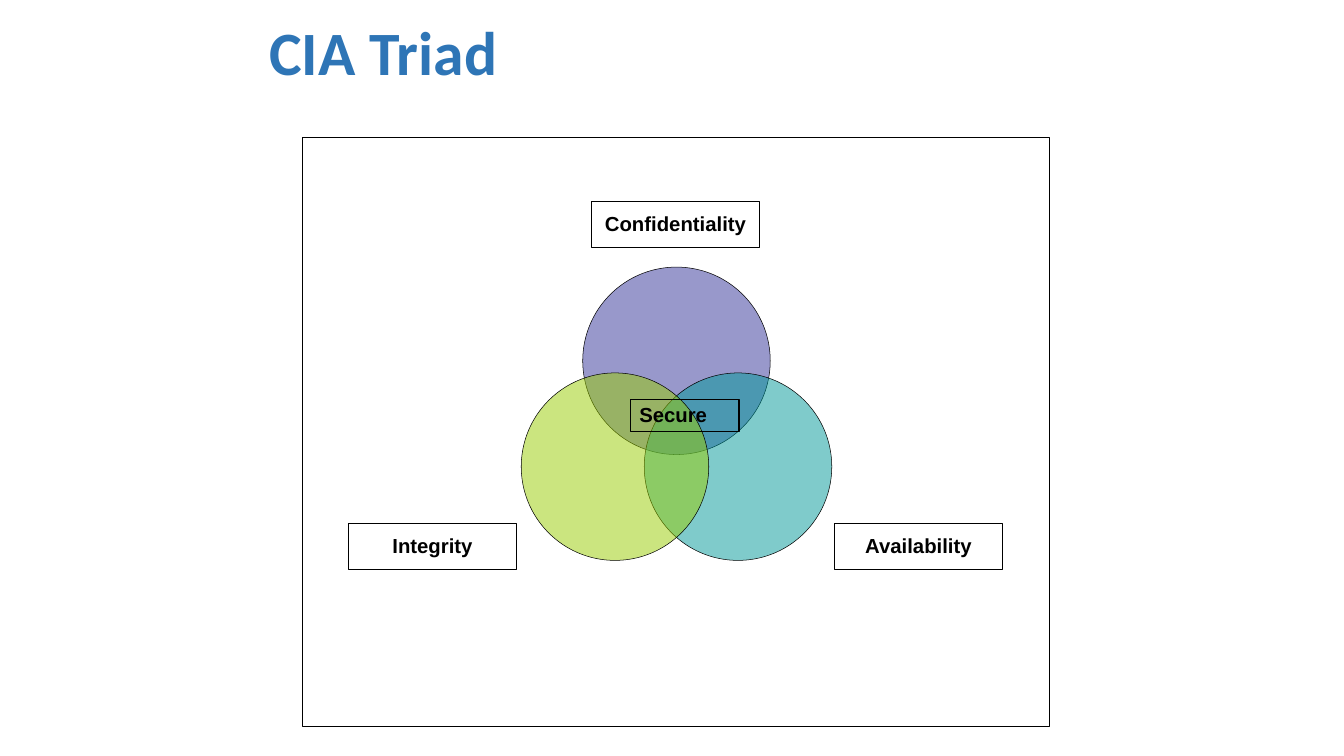
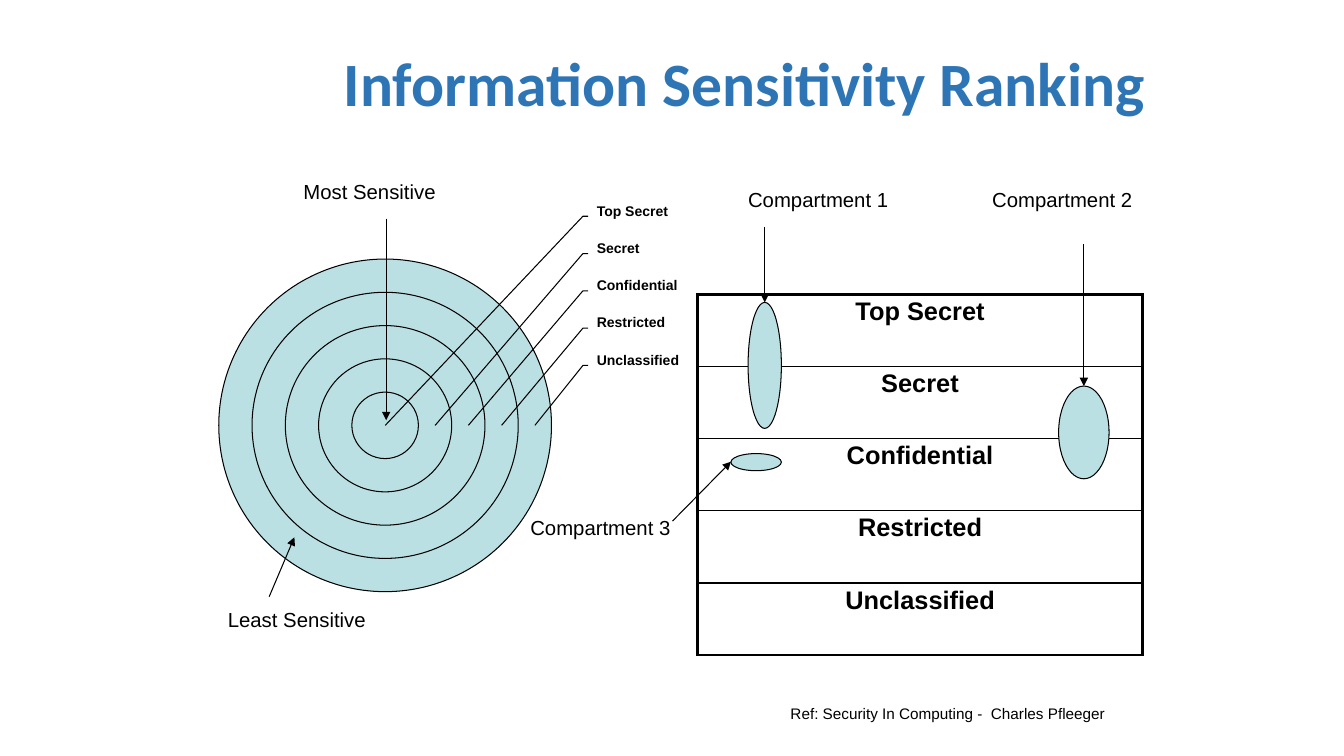
from dataclasses import dataclass

from lxml import etree
from pptx import Presentation
from pptx.dml.color import RGBColor
from pptx.enum.shapes import MSO_CONNECTOR, MSO_SHAPE
from pptx.enum.text import MSO_ANCHOR, MSO_AUTO_SIZE, PP_ALIGN
from pptx.oxml.ns import qn
from pptx.util import Inches, Pt

RECTANGLE, OVAL = MSO_SHAPE.RECTANGLE, MSO_SHAPE.OVAL
CALLOUT = MSO_SHAPE.LINE_CALLOUT_2_NO_BORDER
STRAIGHT = MSO_CONNECTOR.STRAIGHT
LEFT, CENTER = PP_ALIGN.LEFT, PP_ALIGN.CENTER
TOP, MIDDLE = MSO_ANCHOR.TOP, MSO_ANCHOR.MIDDLE
FIXED_SIZE = MSO_AUTO_SIZE.NONE

BLACK = RGBColor(0x00, 0x00, 0x00)
TITLE_BLUE = RGBColor(0x2E, 0x75, 0xB6)
PALE_TEAL = RGBColor(0xBB, 0xE0, 0xE3)
INDIGO = RGBColor(0x33, 0x33, 0x99)
TEAL = RGBColor(0x00, 0x99, 0x99)
LIME = RGBColor(0x99, 0xCC, 0x00)

LABEL_SIZE = 14.5
LINE_SPACING = 0.93
INSETS = (0.09, 0.05)
NO_INSETS = (0, 0)
TITLE_ONLY = 5


@dataclass(frozen=True)
class Box:
    left: float
    top: float
    width: float
    height: float

    @property
    def center_x(self) -> float:
        return self.left + self.width / 2

    def lengths(self) -> tuple:
        return tuple(Inches(n) for n in (self.left, self.top, self.width, self.height))


@dataclass(frozen=True)
class Principle:
    name: str
    color: RGBColor
    circle: tuple
    label: tuple


@dataclass(frozen=True)
class Compartment:
    name: str
    label: tuple
    oval: Box
    arrow_top: float


PRINCIPLES = [
    Principle("Confidentiality", INDIGO, (5.78, 2.65), (5.87, 2)),
    Principle("Availability", TEAL, (6.39, 3.7), (8.28, 5.19)),
    Principle("Integrity", LIME, (5.17, 3.7), (3.46, 5.19)),
]
LEVELS = ["Top Secret", "Secret", "Confidential", "Restricted", "Unclassified"]
TOP_COMPARTMENTS = [
    Compartment("Compartment 1", (7.33, 1.83), Box(7.42, 3, 0.33, 1.25), 2.25),
    Compartment("Compartment 2", (9.75, 1.83), Box(10.5, 3.83, 0.5, 0.92), 2.42),
]
SIDE_OVAL = Box(7.25, 4.5, 0.5, 0.17)


def write(frame, text: str, *, size: float = LABEL_SIZE, bold: bool = False,
          color: RGBColor = BLACK, font: str = "Arial", align=LEFT, anchor=TOP,
          insets: tuple = INSETS, wrap: bool = True) -> None:
    """Fill a text frame or table cell with one formatted paragraph."""
    frame.margin_left = frame.margin_right = Inches(insets[0])
    frame.margin_top = frame.margin_bottom = Inches(insets[1])
    frame.vertical_anchor = anchor
    if hasattr(frame, "auto_size"):
        frame.auto_size = FIXED_SIZE
        frame.word_wrap = wrap
        para = frame.paragraphs[0]
    else:
        para = frame.text_frame.paragraphs[0]
    para.alignment = align
    para.line_spacing = LINE_SPACING
    span = para.add_run()
    span.text = text
    span.font.name, span.font.size = font, Pt(size)
    span.font.bold, span.font.color.rgb = bold, color


def add_page(deck, title: str, left: float, top: float):
    page = deck.slides.add_slide(deck.slide_layouts[TITLE_ONLY])
    heading = page.shapes.title
    heading.left, heading.top, heading.width, heading.height = Box(left, top, 9, 0.78).lengths()
    write(heading.text_frame, title, size=44, bold=True, color=TITLE_BLUE,
          font="Calibri", anchor=MIDDLE)
    return page


def add_figure(page, kind, box: Box, *, fill: RGBColor | None = None,
               opacity: int = 100, line_width: float = 0.75):
    shape = page.shapes.add_shape(kind, *box.lengths())
    shape.shadow.inherit = False
    shape.line.color.rgb, shape.line.width = BLACK, Pt(line_width)
    if fill is None:
        shape.fill.background()
    else:
        shape.fill.solid()
        shape.fill.fore_color.rgb = fill
        if opacity < 100:
            tint = shape.element.spPr.find(qn("a:solidFill"))[0]
            etree.SubElement(tint, qn("a:alpha"), val=str(opacity * 1000))
    return shape


def add_label(page, text: str, box: Box, size: float = LABEL_SIZE) -> None:
    write(page.shapes.add_textbox(*box.lengths()).text_frame, text, size=size)


def add_arrow(page, start: tuple, end: tuple):
    arrow = page.shapes.add_connector(STRAIGHT, *(Inches(n) for n in start + end))
    arrow.line.color.rgb, arrow.line.width = BLACK, Pt(0.75)
    etree.SubElement(arrow.line._get_or_add_ln(), qn("a:tailEnd"), type="triangle")
    etree.SubElement(arrow.element.spPr, qn("a:effectLst"))
    return arrow


def set_borders(cell, widths: dict) -> None:
    """Draw black borders; the keys run in schema order: L, R, T, B."""
    properties = cell._tc.get_or_add_tcPr()
    for position, (side, width) in enumerate(widths.items()):
        border = etree.Element(qn(f"a:ln{side}"), w=str(Pt(width)))
        paint = etree.SubElement(border, qn("a:solidFill"))
        etree.SubElement(paint, qn("a:srgbClr"), val=str(BLACK))
        properties.insert(position, border)


def add_rings(page) -> None:
    """Concentric circles, outermost first, each with a callout into its band."""
    center_x, center_y, step = 3.82, 4.22, 0.33
    tag_left, tag_width, tag_height = 5.92, 0.66, 0.37
    for index in reversed(range(len(LEVELS))):
        radius = step * (index + 1)
        add_figure(page, OVAL, Box(center_x - radius, center_y - radius, 2 * radius, 2 * radius),
                   fill=PALE_TEAL)
        tag = Box(tag_left, 2.02 + tag_height * index, tag_width, tag_height)
        callout = add_figure(page, CALLOUT, tag)
        target_x = center_x + (radius - step / 2 if index else 0)
        bends = (0.34, -0.13, 0.34, -0.21,
                 (center_y - tag.top) / tag_height, (target_x - tag_left) / tag_width)
        for number, bend in enumerate(bends):
            callout.adjustments[number] = bend
        write(callout.text_frame, LEVELS[index], size=10, bold=True,
              insets=NO_INSETS, wrap=False)


def add_level_table(page) -> None:
    thick, thin = 2.25, 1
    last = len(LEVELS) - 1
    box = Box(6.92, 2.92, 4.41, 3.58)
    table = page.shapes.add_table(len(LEVELS), 1, *box.lengths()).table
    table.first_row = table.horz_banding = False
    for index, level in enumerate(LEVELS):
        cell = table.cell(index, 0)
        cell.fill.background()
        set_borders(cell, {"L": thick, "R": thick,
                           "T": thin if index else thick,
                           "B": thin if index < last else thick})
        write(cell, level, size=18.1, bold=True, align=CENTER)


def build_triad(deck) -> None:
    page = add_page(deck, "CIA Triad", 2.58, 0.16)
    add_figure(page, RECTANGLE, Box(3, 1.36, 7.41, 5.85))
    # Overlapping circles and their names
    for principle in PRINCIPLES:
        add_figure(page, OVAL, Box(*principle.circle, 1.86, 1.86),
                   fill=principle.color, opacity=50, line_width=0.37)
        label = add_figure(page, RECTANGLE, Box(*principle.label, 1.66, 0.46))
        write(label.text_frame, principle.name, bold=True, align=CENTER,
              anchor=MIDDLE, insets=NO_INSETS)
    # Shared centre
    core = add_figure(page, RECTANGLE, Box(6.25, 3.96, 1.08, 0.32))
    write(core.text_frame, "Secure", bold=True)


def build_ranking(deck) -> None:
    page = add_page(deck, "Information Sensitivity Ranking", 3.32, 0.46)
    # Sensitivity rings
    add_rings(page)
    add_label(page, "Most Sensitive", Box(2.92, 1.75, 1.83, 0.32))
    add_label(page, "Least Sensitive", Box(2.17, 6, 1.83, 0.32))
    add_arrow(page, (3.83, 2.17), (3.83, 4.17))
    add_arrow(page, (2.67, 5.92), (2.92, 5.33))
    # Levels and the compartments that cut across them
    add_level_table(page)
    for compartment in TOP_COMPARTMENTS:
        oval = compartment.oval
        figure = add_figure(page, OVAL, oval, fill=PALE_TEAL)
        arrow = add_arrow(page, (oval.center_x, compartment.arrow_top), (oval.center_x, oval.top))
        arrow.end_connect(figure, 0)
        add_label(page, compartment.name, Box(*compartment.label, 1.83, 0.32))
    add_figure(page, OVAL, SIDE_OVAL, fill=PALE_TEAL)
    add_arrow(page, (6.67, 5.17), (7.25, 4.58))
    add_label(page, "Compartment 3", Box(5.17, 5.08, 1.83, 0.32))
    # Reference
    add_label(page, "Ref: Security In Computing -  Charles Pfleeger",
              Box(7.75, 6.95, 3.75, 0.26), size=10.9)


def main() -> None:
    deck = Presentation()
    deck.slide_width, deck.slide_height = Inches(13.33), Inches(7.5)
    build_triad(deck)
    build_ranking(deck)
    deck.save("out.pptx")


if __name__ == "__main__":
    main()
